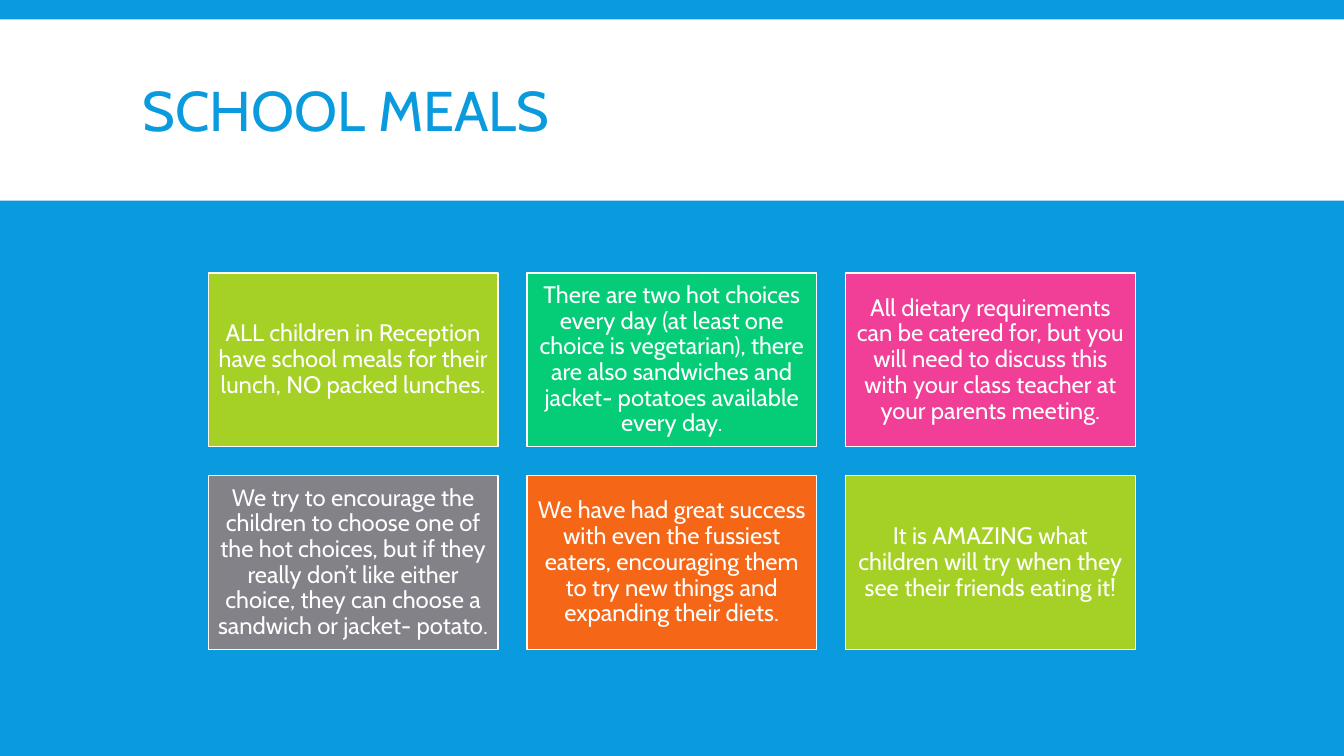
from dataclasses import dataclass

from pptx import Presentation
from pptx.dml.color import RGBColor
from pptx.enum.shapes import MSO_SHAPE
from pptx.enum.text import MSO_ANCHOR, PP_ALIGN
from pptx.shapes.autoshape import Shape
from pptx.slide import Slide
from pptx.util import Cm, Pt


@dataclass(frozen=True)
class Theme:
    font: str = "Cabin"
    blue: str = "099BDD"
    white: str = "FFFFFF"
    lime: str = "A5D025"
    green: str = "05CC76"
    pink: str = "F13E97"
    grey: str = "828288"
    orange: str = "F56617"
    title_size: int = 40
    card_size: int = 17
    card_outline: int = 1


@dataclass(frozen=True)
class Card:
    text: str
    fill: str


THEME = Theme()

SLIDE_WIDTH, SLIDE_HEIGHT = 33.87, 19.05
COLUMNS = 3
GRID_LEFT, GRID_TOP = 5.25, 6.88
CARD_WIDTH, CARD_HEIGHT = 7.3, 4.38
CARD_GAP = 0.73
CARD_INSET = 0.18

CARDS = [
    Card("ALL children in Reception have school meals for their lunch, "
         "NO packed lunches.", THEME.lime),
    Card("There are two hot choices every day (at least one choice is vegetarian), "
         "there are also sandwiches and jacket- potatoes available every day.", THEME.green),
    Card("All dietary requirements can be catered for, but you will need to discuss "
         "this with your class teacher at your parents meeting.", THEME.pink),
    Card("We try to encourage the children to choose one of the hot choices, but if they "
         "really don’t like either choice, they can choose a sandwich or jacket- potato.",
         THEME.grey),
    Card("We have had great success with even the fussiest eaters, encouraging them "
         "to try new things and expanding their diets.", THEME.orange),
    Card("It is AMAZING what children will try when they see their friends eating it!",
         THEME.lime),
]


def rgb(colour: str) -> RGBColor:
    return RGBColor.from_string(colour)


def add_rectangle(page: Slide, left: float, top: float, width: float, height: float,
                  fill: str) -> Shape:
    """Add a flat rectangle without outline; lengths are in centimetres."""
    box = page.shapes.add_shape(MSO_SHAPE.RECTANGLE, Cm(left), Cm(top), Cm(width), Cm(height))
    box.shadow.inherit = False
    box.fill.solid()
    box.fill.fore_color.rgb = rgb(fill)
    box.line.fill.background()
    return box


def write_text(box: Shape, text: str, size: int, colour: str,
               alignment: PP_ALIGN, line_spacing: float) -> None:
    frame = box.text_frame
    frame.word_wrap = True
    frame.vertical_anchor = MSO_ANCHOR.MIDDLE
    para = frame.paragraphs[0]
    para.text = text
    para.alignment = alignment
    para.line_spacing = line_spacing
    para.font.name = THEME.font
    para.font.size = Pt(size)
    para.font.color.rgb = rgb(colour)


def add_title(page: Slide, text: str) -> None:
    add_rectangle(page, 0, 0.49, SLIDE_WIDTH, 4.57, THEME.white)
    box = page.shapes.add_textbox(Cm(3.35), Cm(0.79), Cm(27.18), Cm(4.19))
    write_text(box, text, THEME.title_size, THEME.blue, PP_ALIGN.LEFT, 0.85)


def add_card(page: Slide, card: Card, row: int, column: int) -> None:
    left = GRID_LEFT + column * (CARD_WIDTH + CARD_GAP)
    top = GRID_TOP + row * (CARD_HEIGHT + CARD_GAP)
    box = add_rectangle(page, left, top, CARD_WIDTH, CARD_HEIGHT, card.fill)
    box.line.color.rgb = rgb(THEME.white)
    box.line.width = Pt(THEME.card_outline)
    frame = box.text_frame
    frame.margin_left = frame.margin_right = Cm(CARD_INSET)
    frame.margin_top = frame.margin_bottom = Cm(CARD_INSET)
    write_text(box, card.text, THEME.card_size, THEME.white, PP_ALIGN.CENTER, 0.9)


def main() -> None:
    deck = Presentation()
    deck.slide_width, deck.slide_height = Cm(SLIDE_WIDTH), Cm(SLIDE_HEIGHT)
    page = deck.slides.add_slide(deck.slide_layouts[6])
    page.background.fill.solid()
    page.background.fill.fore_color.rgb = rgb(THEME.blue)
    add_title(page, "SCHOOL MEALS")
    for index, card in enumerate(CARDS):
        add_card(page, card, *divmod(index, COLUMNS))
    deck.save("out.pptx")


if __name__ == "__main__":
    main()
